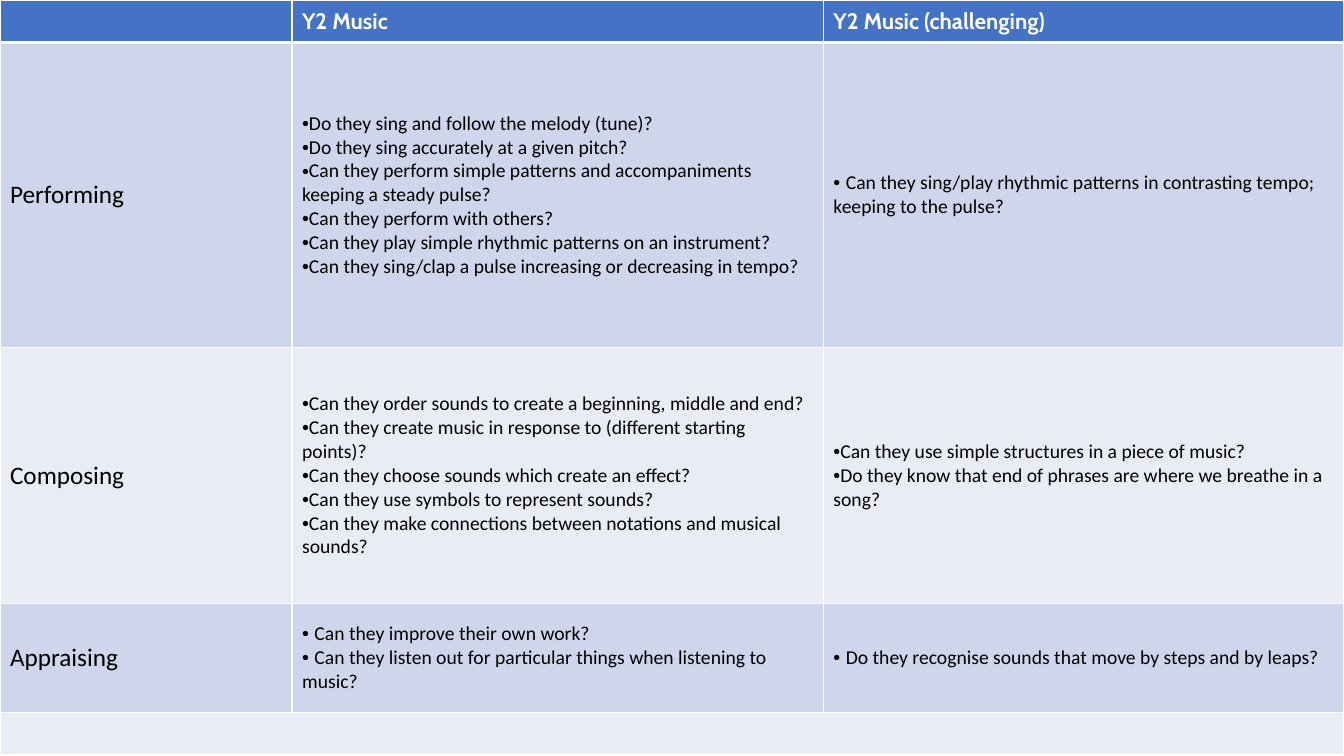
from lxml import etree
from pptx import Presentation
from pptx.dml.color import RGBColor
from pptx.enum.text import MSO_ANCHOR
from pptx.oxml.ns import qn
from pptx.util import Cm, Pt

COLOURS = {
    "header": "4472C4",
    "odd": "CFD5EA",
    "even": "E9EBF5",
    "border": "FFFFFF",
    "heading": "FFFFFF",
    "text": "000000",
}
COLUMN_WIDTHS = [7.36, 13.39, 13.11]
ROW_HEIGHTS = [1.07, 7.69, 6.45, 2.74, 1.07]

HEADINGS = ["Y2 Music", "Y2 Music (challenging)"]
STRANDS = [
    ("Performing",
     ("list", ["Do they sing and follow the melody (tune)?",
               "Do they sing accurately at a given pitch?",
               "Can they perform simple patterns and accompaniments keeping a steady pulse?",
               "Can they perform with others?",
               "Can they play simple rhythmic patterns on an instrument?",
               "Can they sing/clap a pulse increasing or decreasing in tempo?"]),
     ("inline", ["Can they sing/play rhythmic patterns in contrasting tempo; keeping to the pulse?"])),
    ("Composing",
     ("list", ["Can they order sounds to create a beginning, middle and end?",
               "Can they create music in response to (different starting points)?",
               "Can they choose sounds which create an effect?",
               "Can they use symbols to represent sounds?",
               "Can they make connections between notations and musical sounds?"]),
     ("list", ["Can they use simple structures in a piece of music?",
               "Do they know that end of phrases are where we breathe in a song?"])),
    ("Appraising",
     ("inline", ["Can they improve their own work?",
                 "Can they listen out for particular things when listening to music?"]),
     ("inline", ["Do they recognise sounds that move by steps and by leaps?"])),
]


def add_run(paragraph, text, size, font="Calibri", colour="text", bold=False):
    run = paragraph.add_run()
    run.text = text
    run.font.size = Pt(size)
    run.font.name = font
    run.font.bold = bold
    run.font.color.rgb = RGBColor.from_string(COLOURS[colour])


def style_cell(cell, fill, top, bottom):
    cell.vertical_anchor = MSO_ANCHOR.MIDDLE
    cell.fill.solid()
    cell.fill.fore_color.rgb = RGBColor.from_string(COLOURS[fill])
    properties = cell._tc.get_or_add_tcPr()
    widths = {"a:lnL": 1, "a:lnR": 1, "a:lnT": top, "a:lnB": bottom}
    for position, (side, width) in enumerate(widths.items()):
        line = etree.Element(qn(side), w=str(Pt(width)))
        solid = etree.SubElement(line, qn("a:solidFill"))
        etree.SubElement(solid, qn("a:srgbClr"), val=COLOURS["border"])
        properties.insert(position, line)


prs = Presentation()
prs.slide_width = Cm(33.87)
prs.slide_height = Cm(19.05)
slide = prs.slides.add_slide(prs.slide_layouts[6])

curriculum = slide.shapes.add_table(
    len(ROW_HEIGHTS), len(COLUMN_WIDTHS), Cm(0), Cm(0), prs.slide_width, prs.slide_height
).table
for column, width in zip(curriculum.columns, COLUMN_WIDTHS):
    column.width = Cm(width)

for row_number, (row, height) in enumerate(zip(curriculum.rows, ROW_HEIGHTS)):
    row.height = Cm(height)
    band = "header" if row_number == 0 else "odd" if row_number % 2 else "even"
    for cell in row.cells:
        style_cell(cell, band, 3 if row_number == 1 else 1, 3 if row_number == 0 else 1)

for column_number, heading in enumerate(HEADINGS, 1):
    paragraph = curriculum.cell(0, column_number).text_frame.paragraphs[0]
    add_run(paragraph, heading, 16, "Cabin", "heading", True)

for row_number, (strand, *question_sets) in enumerate(STRANDS, 1):
    add_run(curriculum.cell(row_number, 0).text_frame.paragraphs[0], strand, 18)
    for column_number, (layout, questions) in enumerate(question_sets, 1):
        frame = curriculum.cell(row_number, column_number).text_frame
        paragraph = frame.paragraphs[0]
        for question_number, question in enumerate(questions):
            if layout == "list":
                if question_number:
                    paragraph = frame.add_paragraph()
                bullet = paragraph._p.get_or_add_pPr()
                etree.SubElement(bullet, qn("a:buFont"), typeface="Arial")
                etree.SubElement(bullet, qn("a:buChar"), char="•")
            else:
                if question_number:
                    paragraph.add_line_break()
                add_run(paragraph, "• ", 14, "Arial")
            add_run(paragraph, question, 14)

last_row = len(ROW_HEIGHTS) - 1
curriculum.cell(last_row, 0).merge(curriculum.cell(last_row, len(COLUMN_WIDTHS) - 1))

prs.save("out.pptx")
